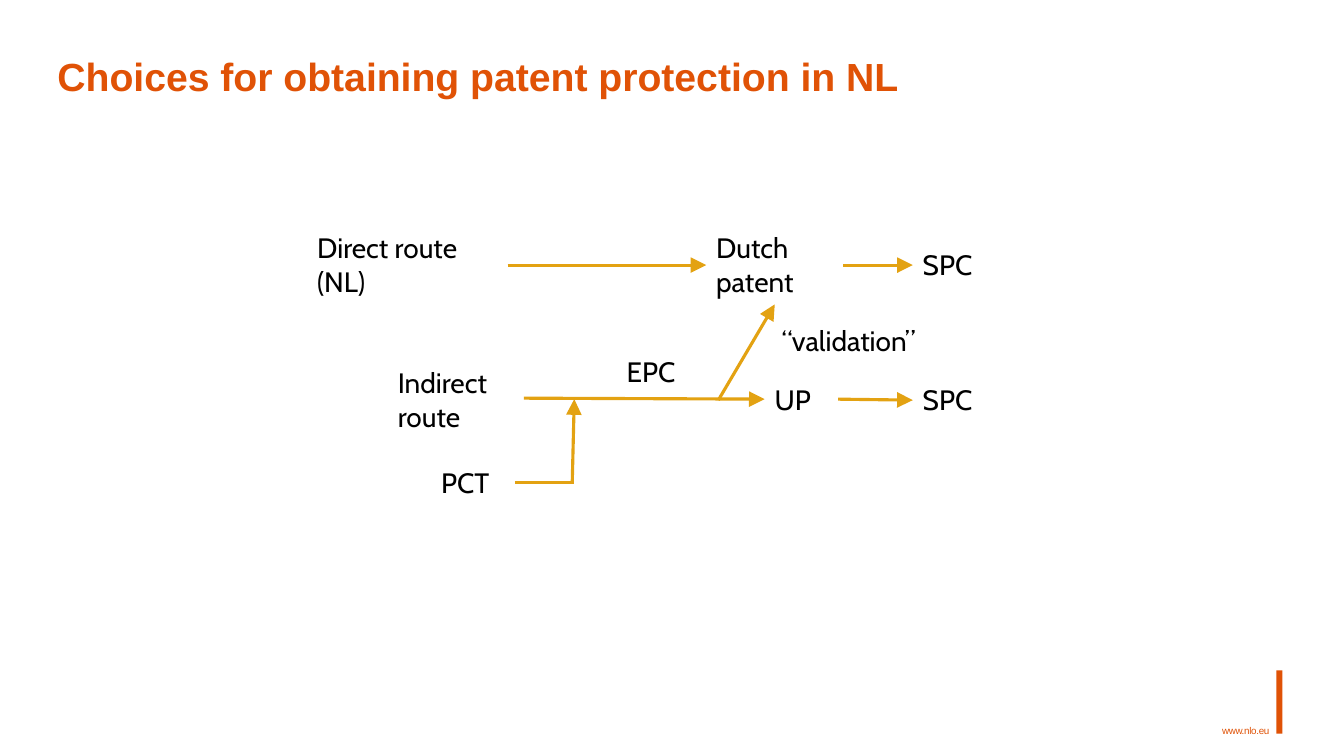
"""Build a slide on the routes to patent protection in the Netherlands."""
from lxml import etree
from pptx import Presentation
from pptx.dml.color import RGBColor
from pptx.enum import shapes, text
from pptx.oxml import ns
from pptx.util import Inches, Pt

ORANGE = RGBColor(0xE0, 0x52, 0x06)
GOLD = RGBColor(0xE3, 0xA2, 0x12)
BLACK = RGBColor(0, 0, 0)

presentation = Presentation()
presentation.slide_width = Inches(13.34)
presentation.slide_height = Inches(7.5)
slide = presentation.slides.add_slide(presentation.slide_layouts[6])


def add_text(content, left, top, width, height, font_name, size, color, inset=True):
    box = slide.shapes.add_textbox(Inches(left), Inches(top), Inches(width), Inches(height))
    frame = box.text_frame
    frame.word_wrap = True
    if not inset:
        frame.margin_left = frame.margin_right = 0
        frame.margin_top = frame.margin_bottom = 0
    frame.text = content
    for paragraph in frame.paragraphs:
        for run in paragraph.runs:
            run.font.name = font_name
            run.font.size = Pt(size)
            run.font.color.rgb = color
    return frame


def add_line(start_x, start_y, end_x, end_y, arrow=True):
    connector = slide.shapes.add_connector(
        shapes.MSO_CONNECTOR.STRAIGHT,
        Inches(start_x), Inches(start_y), Inches(end_x), Inches(end_y))
    connector.line.color.rgb = GOLD
    connector.line.width = Pt(2.25)
    if arrow:
        line = connector.line._get_or_add_ln()
        etree.SubElement(line, ns.qn("a:tailEnd"), type="triangle", w="lg", len="lg")
    etree.SubElement(connector._element.spPr, ns.qn("a:effectLst"))


title = add_text("Choices for obtaining patent protection in NL",
                 0.57, 0.49, 12.2, 0.58, "Arial", 28, ORANGE, inset=False)
title.vertical_anchor = text.MSO_ANCHOR.MIDDLE
title.paragraphs[0].line_spacing = 0.9
title.paragraphs[0].runs[0].font.bold = True

footer = add_text("www.nlo.eu", 12.13, 7.2, 0.53, 0.17, "Arial", 7, ORANGE, inset=False)
footer.paragraphs[0].line_spacing = 0.9
footer.paragraphs[0].runs[0].font._element.set("spc", "-20")

footer_bar = slide.shapes.add_shape(
    shapes.MSO_SHAPE.RECTANGLE, Inches(12.67), Inches(6.65), Inches(0.06), Inches(0.63))
footer_bar.shadow.inherit = False
footer_bar.fill.solid()
footer_bar.fill.fore_color.rgb = ORANGE
footer_bar.line.fill.background()

route_labels = [
    ("Direct route\n(NL)", 3.05, 2.24, 2, 0.77),
    ("Dutch patent", 7.01, 2.24, 1.35, 0.77),
    ("SPC", 9.06, 2.41, 1.35, 0.44),
    ("Indirect\nroute", 3.85, 3.58, 1.35, 1.11),
    ("UP", 7.59, 3.75, 0.73, 0.44),
    ("SPC", 9.06, 3.75, 1.35, 0.44),
    ("“validation”", 7.66, 3.16, 1.61, 0.44),
    ("PCT", 4.28, 4.57, 0.83, 0.44),
    ("EPC", 6.12, 3.47, 0.75, 0.44),
]
for label, left, top, width, height in route_labels:
    add_text(label, left, top, width, height, "Cabin", 20, BLACK)

route_arrows = [
    (5.04, 2.63, 7.01, 2.63),
    (8.37, 2.63, 9.06, 2.63),
    (5.2, 3.95, 7.59, 3.96),
    (8.32, 3.96, 9.06, 3.97),
    (7.13, 3.97, 7.69, 3.02),
    (5.68, 4.79, 5.7, 3.96),
]
for arrow_ends in route_arrows:
    add_line(*arrow_ends)
add_line(5.11, 4.79, 5.7, 4.79, arrow=False)

presentation.save("out.pptx")
